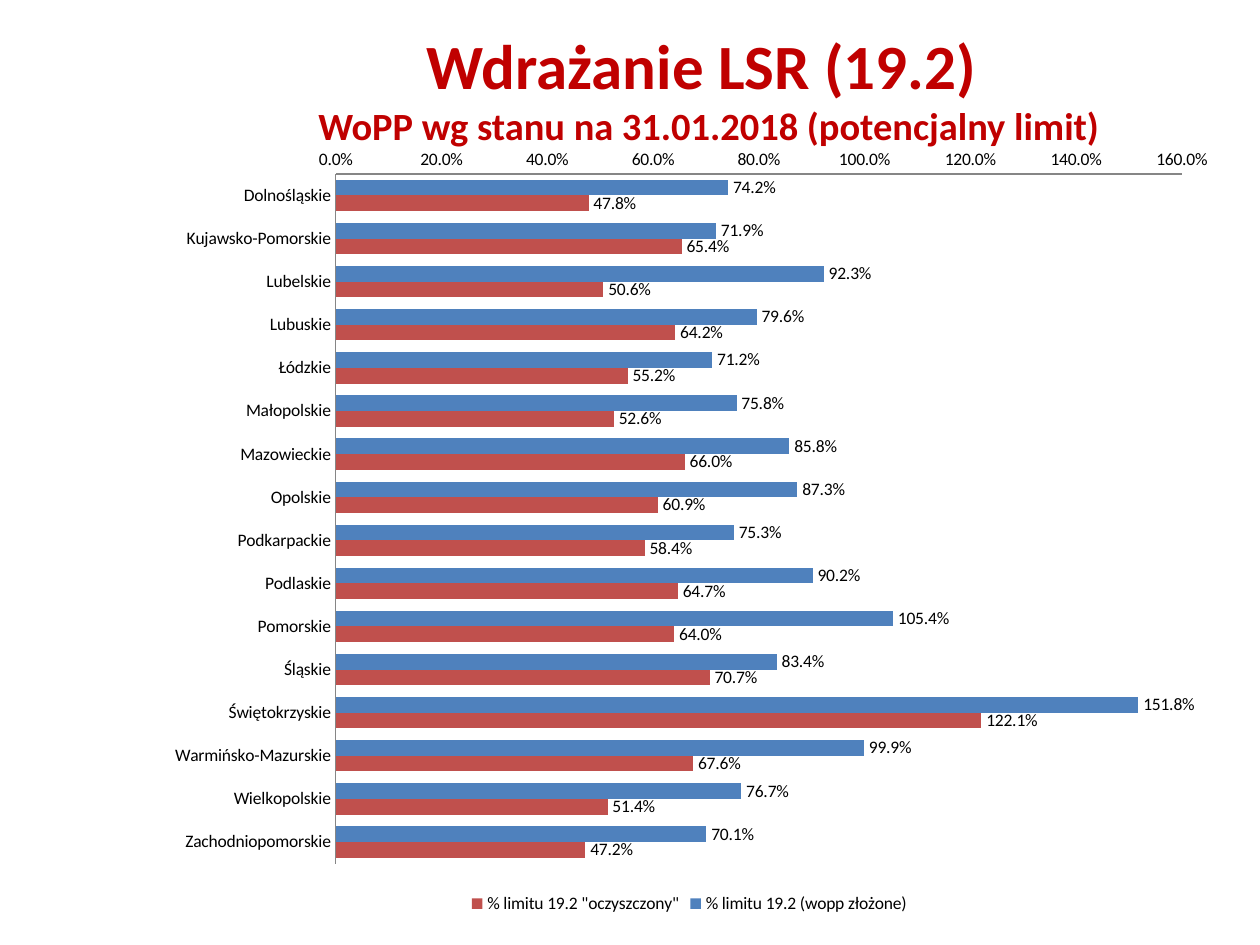
from dataclasses import dataclass

from lxml import etree
from pptx import Presentation
from pptx import util as u
from pptx.chart.data import CategoryChartData
from pptx.dml.color import RGBColor
from pptx.enum import chart as charts, text
from pptx.oxml.ns import qn


@dataclass(frozen=True)
class Theme:
    font: str = "Calibri"
    title: RGBColor = RGBColor(0xC0, 0x00, 0x00)
    ink: RGBColor = RGBColor(0, 0, 0)
    axis: RGBColor = RGBColor(0x86, 0x86, 0x86)
    submitted: RGBColor = RGBColor(0x4F, 0x81, 0xBD)
    cleaned: RGBColor = RGBColor(0xC0, 0x50, 0x4D)
    title_size: u.Pt = u.Pt(36)
    subtitle_size: u.Pt = u.Pt(22)
    chart_size: u.Pt = u.Pt(10)


theme = Theme()
percent = "0.0%"

# Region, submitted applications, cleaned applications
regions = [
    ("Dolnośląskie", 0.742, 0.478),
    ("Kujawsko-Pomorskie", 0.719, 0.654),
    ("Lubelskie", 0.923, 0.506),
    ("Lubuskie", 0.796, 0.642),
    ("Łódzkie", 0.712, 0.552),
    ("Małopolskie", 0.758, 0.526),
    ("Mazowieckie", 0.858, 0.66),
    ("Opolskie", 0.873, 0.609),
    ("Podkarpackie", 0.753, 0.584),
    ("Podlaskie", 0.902, 0.647),
    ("Pomorskie", 1.054, 0.64),
    ("Śląskie", 0.834, 0.707),
    ("Świętokrzyskie", 1.518, 1.221),
    ("Warmińsko-Mazurskie", 0.999, 0.676),
    ("Wielkopolskie", 0.767, 0.514),
    ("Zachodniopomorskie", 0.701, 0.472),
]
names, submitted, cleaned = zip(*regions)

deck = Presentation()
deck.slide_width, deck.slide_height = u.Inches(10), u.Inches(7.5)
page = deck.slides.add_slide(deck.slide_layouts[6])

# Title
box = page.shapes.add_textbox(u.Inches(1.33), u.Inches(0.08), u.Inches(8.59), u.Inches(1.23))
frame = box.text_frame
frame.word_wrap = True
frame.vertical_anchor = text.MSO_ANCHOR.MIDDLE
para = frame.paragraphs[0]
para.alignment = text.PP_ALIGN.CENTER
for wording, size in (
    ("Wdrażanie LSR (19.2) ", theme.title_size),
    ("WoPP wg stanu na 31.01.2018 (potencjalny limit)", theme.subtitle_size),
):
    if para.runs:
        para.add_line_break()
    span = para.add_run()
    span.text = wording
    span.font.name = theme.font
    span.font.size = size
    span.font.bold = True
    span.font.color.rgb = theme.title

# Chart
data = CategoryChartData(number_format=percent)
data.categories = names
data.add_series("% limitu 19.2 (wopp złożone)", submitted)
data.add_series('% limitu 19.2 "oczyszczony"', cleaned)
chart = page.shapes.add_chart(
    charts.XL_CHART_TYPE.BAR_CLUSTERED,
    u.Inches(1.22), u.Inches(1.07), u.Inches(8.5), u.Inches(6.22), data,
).chart
chart.has_title = False
chart.font.name = theme.font
chart.font.size = theme.chart_size
chart.font.color.rgb = theme.ink
chart.has_legend = True
chart.legend.position = charts.XL_LEGEND_POSITION.BOTTOM
chart.legend.include_in_layout = False

for axis in (chart.category_axis, chart.value_axis):
    axis.has_major_gridlines = False
    axis.major_tick_mark = charts.XL_TICK_MARK.NONE
    axis.minor_tick_mark = charts.XL_TICK_MARK.NONE
    axis.format.line.color.rgb = theme.axis
chart.category_axis.reverse_order = True
values = chart.value_axis
values.minimum_scale, values.maximum_scale, values.major_unit = 0, 1.6, 0.2
values.tick_labels.number_format = percent
values.tick_labels.number_format_is_linked = False

plot = chart.plots[0]
plot.gap_width = 75
plot.vary_by_categories = False
for series, color in zip(plot.series, (theme.submitted, theme.cleaned)):
    series.format.fill.solid()
    series.format.fill.fore_color.rgb = color
    labels = series.data_labels
    labels.show_value = True
    labels.number_format = percent
    labels.number_format_is_linked = False
    labels.position = charts.XL_LABEL_POSITION.OUTSIDE_END

# Fixed inner plot area, as fractions of the chart
plot_area = chart.element.find(".//" + qn("c:plotArea"))
layout = plot_area.find(qn("c:layout"))
if layout is None:
    layout = etree.Element(qn("c:layout"))
    plot_area.insert(0, layout)
manual = etree.SubElement(layout, qn("c:manualLayout"))
for tag, value in (
    ("layoutTarget", "inner"), ("xMode", "edge"), ("yMode", "edge"),
    ("x", 0.17), ("y", 0.05), ("w", 0.79), ("h", 0.88),
):
    etree.SubElement(manual, qn("c:" + tag)).set("val", str(value))

deck.save("out.pptx")
